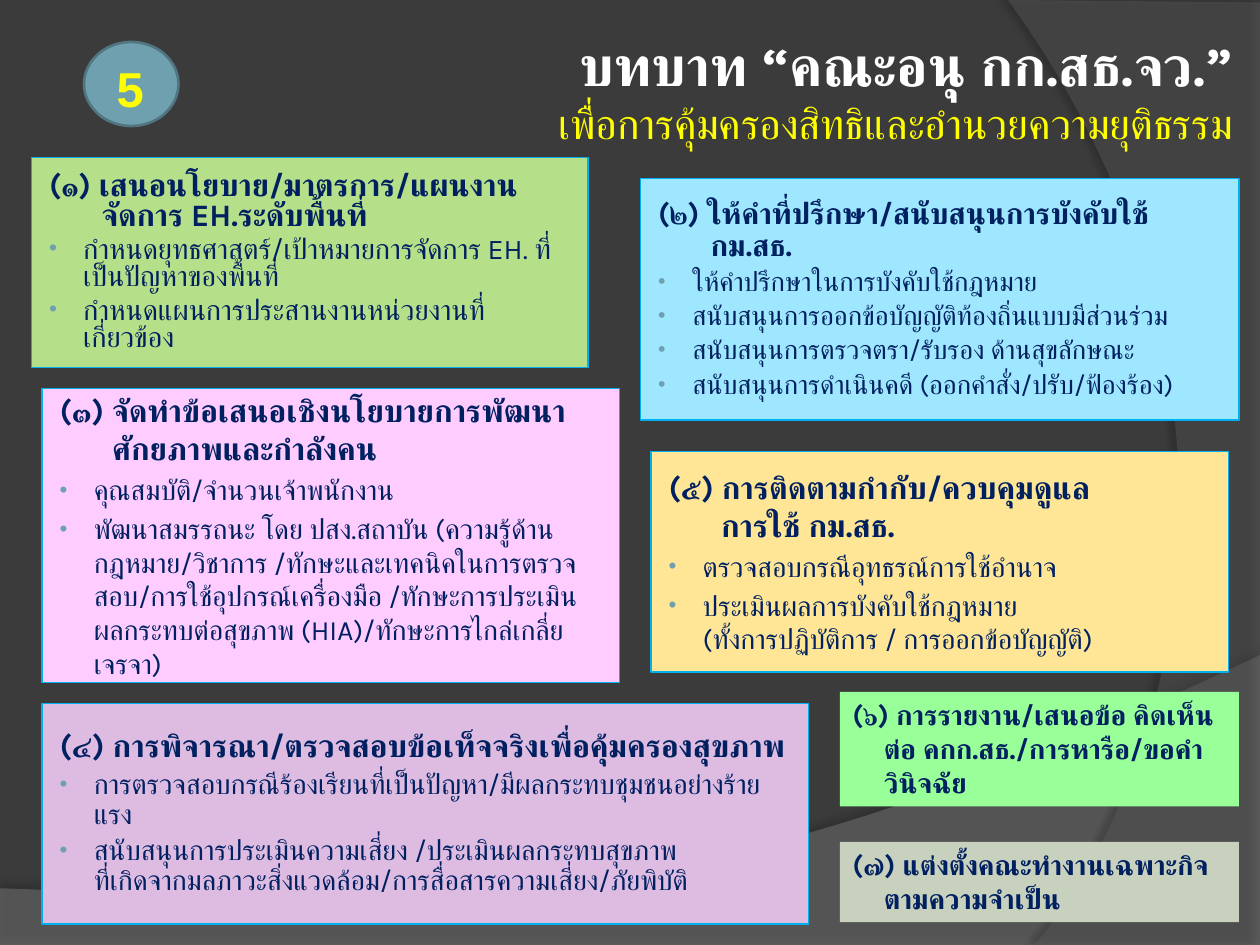
from lxml import etree
from pptx import Presentation
from pptx.dml.color import RGBColor
from pptx.enum import shapes, text
from pptx.oxml import ns
from pptx.util import Pt


class Theme:
    font, number_font = "Karla", "Arial"
    background, white, yellow = "3B3B3B", "FFFFFF", "FFFF00"
    navy, teal, teal_dark, border = "002060", "6EA0B0", "517682", "00B0F0"
    title_size, subtitle_size, number_size, note_size = 32, 24, 28, 16


def add_xml(parent, tag, **attributes):
    return etree.SubElement(parent, ns.qn(tag), attributes)


def style(paragraph, size, color, bold=True, font=Theme.font):
    paragraph.font.size = Pt(size)
    paragraph.font.bold = bold
    paragraph.font.name = font
    paragraph.font.color.rgb = RGBColor.from_string(color)
    # Thai glyphs take the complex-script font
    add_xml(paragraph._p.pPr.find(ns.qn("a:defRPr")), "a:cs", typeface=font)


presentation = Presentation()
presentation.slide_width, presentation.slide_height = Pt(720), Pt(540)
slide = presentation.slides.add_slide(presentation.slide_layouts[6])
slide.background.fill.solid()
slide.background.fill.fore_color.rgb = RGBColor.from_string(Theme.background)

# Background sweeps: straight corners, then a Bezier curve back to the start
# corners, curve control points, colour, opacity, shadow opacity, shadow angle
sweeps = [
    ([(0, 507.6), (0, 540), (720, 540), (720, 374.4)],
     [(402.5, 524.9), (281.5, 517.7), (0, 507.6)], "7F7F7F", 45, 35, 270),
    ([(720, 1.4), (720, 540), (591.1, 540)],
     [(673.2, 445.7), (733, 216), (576, 0)], "5E5E5E", 40, 45, 180),
]
steps = 40
for corners, controls, color, opacity, shadow_opacity, angle in sweeps:
    bezier = [corners[-1]] + controls
    outline = list(corners)
    for step in range(1, steps + 1):
        t = step / steps
        weights = [(1 - t) ** 3, 3 * t * (1 - t) ** 2, 3 * t * t * (1 - t), t ** 3]
        outline.append([sum(w * point[axis] for w, point in zip(weights, bezier))
                        for axis in (0, 1)])
    points = [(Pt(x), Pt(y)) for x, y in outline]
    builder = slide.shapes.build_freeform(*points[0])
    builder.add_line_segments(points[1:], close=True)
    shape = builder.convert_to_shape()
    shape.shadow.inherit = False
    shape.fill.solid()
    shape.fill.fore_color.rgb = RGBColor.from_string(color)
    shape.line.fill.background()
    properties = shape._element.spPr
    fill_color = properties.find(ns.qn("a:solidFill"))[0]
    add_xml(fill_color, "a:alpha", val=str(opacity * 1000))
    shadow = add_xml(properties.find(ns.qn("a:effectLst")), "a:outerShdw",
                     blurRad=str(Pt(4)), dist=str(Pt(4)), dir=str(angle * 60000))
    shadow_color = add_xml(shadow, "a:srgbClr", val="000000")
    add_xml(shadow_color, "a:alpha", val=str(shadow_opacity * 1000))

# Title and subtitle
title = slide.shapes.add_textbox(Pt(66), Pt(6), Pt(642), Pt(90))
frame = title.text_frame
frame.word_wrap = True
frame.vertical_anchor = text.MSO_ANCHOR.MIDDLE
frame.margin_left = frame.margin_right = Pt(3.6)
for index, (words, size, color, bold) in enumerate([
    ("บทบาท “คณะอนุ กก.สธ.จว.”", Theme.title_size, Theme.white, True),
    ("เพื่อการคุ้มครองสิทธิและอำนวยความยุติธรรม", Theme.subtitle_size, Theme.yellow, False),
]):
    paragraph = frame.add_paragraph() if index else frame.paragraphs[0]
    paragraph.text = words
    paragraph.alignment = text.PP_ALIGN.RIGHT
    style(paragraph, size, color, bold)

# Role cards: box, fill, line spacing, heading size, bullet size, heading, bullets
cards = [
    ((18, 90, 318, 120), "B6DF89", 0.8, 17.8, 16.3,
     "(๑) เสนอนโยบาย/มาตรการ/แผนงาน จัดการ EH.ระดับพื้นที่",
     ["กำหนดยุทธศาสตร์/เป้าหมายการจัดการ EH. ที่เป็นปัญหาของพื้นที่",
      "กำหนดแผนการประสานงานหน่วยงานที่เกี่ยวข้อง"]),
    ((366, 102, 342, 138), "9FE6FF", 0.9, 17, 15.3,
     "(๒) ให้คำที่ปรึกษา/สนับสนุนการบังคับใช้ กม.สธ.",
     ["ให้คำปรึกษาในการบังคับใช้กฎหมาย",
      "สนับสนุนการออกข้อบัญญัติท้องถิ่นแบบมีส่วนร่วม",
      "สนับสนุนการตรวจตรา/รับรอง ด้านสุขลักษณะ",
      "สนับสนุนการดำเนินคดี (ออกคำสั่ง/ปรับ/ฟ้องร้อง)"]),
    ((24, 222, 330, 168), "FFCCFF", 1, 18, 16,
     "(๓) จัดทำข้อเสนอเชิงนโยบายการพัฒนาศักยภาพและกำลังคน",
     ["คุณสมบัติ/จำนวนเจ้าพนักงาน",
      "พัฒนาสมรรถนะ โดย ปสง.สถาบัน (ความรู้ด้านกฎหมาย/วิชาการ "
      "/ทักษะและเทคนิคในการตรวจสอบ/การใช้อุปกรณ์เครื่องมือ "
      "/ทักษะการประเมินผลกระทบต่อสุขภาพ (HIA)/ทักษะการไกล่เกลี่ยเจรจา)"]),
    ((372, 258, 330, 126), "FFE697", 1, 18, 16,
     "(๕) การติดตามกำกับ/ควบคุมดูแล\nการใช้ กม.สธ.",
     ["ตรวจสอบกรณีอุทธรณ์การใช้อำนาจ",
      "ประเมินผลการบังคับใช้กฎหมาย\n(ทั้งการปฏิบัติการ / การออกข้อบัญญัติ)"]),
    ((24, 402, 438, 126), "DEBCE2", 0.9, 18, 16,
     "(๔) การพิจารณา/ตรวจสอบข้อเท็จจริงเพื่อคุ้มครองสุขภาพ",
     ["การตรวจสอบกรณีร้องเรียนที่เป็นปัญหา/มีผลกระทบชุมชนอย่างร้ายแรง",
      "สนับสนุนการประเมินความเสี่ยง /ประเมินผลกระทบสุขภาพ\n"
      "ที่เกิดจากมลภาวะสิ่งแวดล้อม/การสื่อสารความเสี่ยง/ภัยพิบัติ"]),
]
for box, color, spacing, heading_size, bullet_size, heading, bullets in cards:
    shape = slide.shapes.add_shape(shapes.MSO_SHAPE.RECTANGLE, *map(Pt, box))
    shape.shadow.inherit = False
    shape.fill.solid()
    shape.fill.fore_color.rgb = RGBColor.from_string(color)
    shape.line.color.rgb = RGBColor.from_string(Theme.border)
    shape.line.width = Pt(0.75)
    frame = shape.text_frame
    frame.word_wrap = True
    frame.vertical_anchor = text.MSO_ANCHOR.MIDDLE
    for index, words in enumerate([heading] + bullets):
        paragraph = frame.add_paragraph() if index else frame.paragraphs[0]
        paragraph.text = words
        paragraph.alignment = text.PP_ALIGN.LEFT
        size = bullet_size if index else heading_size
        paragraph.line_spacing = float(spacing)
        paragraph.space_before = Pt(size * 0.2)
        margin, indent = (22.5, -19.5) if index else (33, -30)
        properties = paragraph._p.get_or_add_pPr()
        properties.set("marL", str(Pt(margin)))
        properties.set("indent", str(Pt(indent)))
        if index:
            bullet_color = add_xml(properties, "a:buClr")
            add_xml(bullet_color, "a:srgbClr", val=Theme.teal)
            add_xml(properties, "a:buSzPct", val="80000")
            add_xml(properties, "a:buFont", typeface=Theme.number_font)
            add_xml(properties, "a:buChar", char="•")
        style(paragraph, size, Theme.navy, bold=not index)

# Short notes at lower right
notes = [
    (395.3, 65.5, "99FF99", "(๖) การรายงาน/เสนอข้อ คิดเห็นต่อ คกก.สธ./การหารือ/ขอคำวินิจฉัย"),
    (481, 46, "C8D0BE", "(๗) แต่งตั้งคณะทำงานเฉพาะกิจ ตามความจำเป็น"),
]
for top, height, color, words in notes:
    note = slide.shapes.add_textbox(Pt(480), Pt(top), Pt(228), Pt(height))
    note.fill.solid()
    note.fill.fore_color.rgb = RGBColor.from_string(color)
    note.text_frame.word_wrap = True
    paragraph = note.text_frame.paragraphs[0]
    paragraph.text = words
    properties = paragraph._p.get_or_add_pPr()
    properties.set("marL", str(Pt(18)))
    properties.set("indent", str(Pt(-18)))
    style(paragraph, Theme.note_size, Theme.navy)

# Number badge
badge = slide.shapes.add_shape(shapes.MSO_SHAPE.OVAL, Pt(48), Pt(24), Pt(54), Pt(48))
badge.shadow.inherit = False
badge.fill.solid()
badge.fill.fore_color.rgb = RGBColor.from_string(Theme.teal)
badge.line.color.rgb = RGBColor.from_string(Theme.teal_dark)
badge.line.width = Pt(1.5)
number = slide.shapes.add_textbox(Pt(50.4), Pt(30.2), Pt(48), Pt(41))
number.text_frame.word_wrap = True
paragraph = number.text_frame.paragraphs[0]
paragraph.text = "5"
paragraph.alignment = text.PP_ALIGN.CENTER
style(paragraph, Theme.number_size, Theme.yellow, font=Theme.number_font)

presentation.save("out.pptx")
